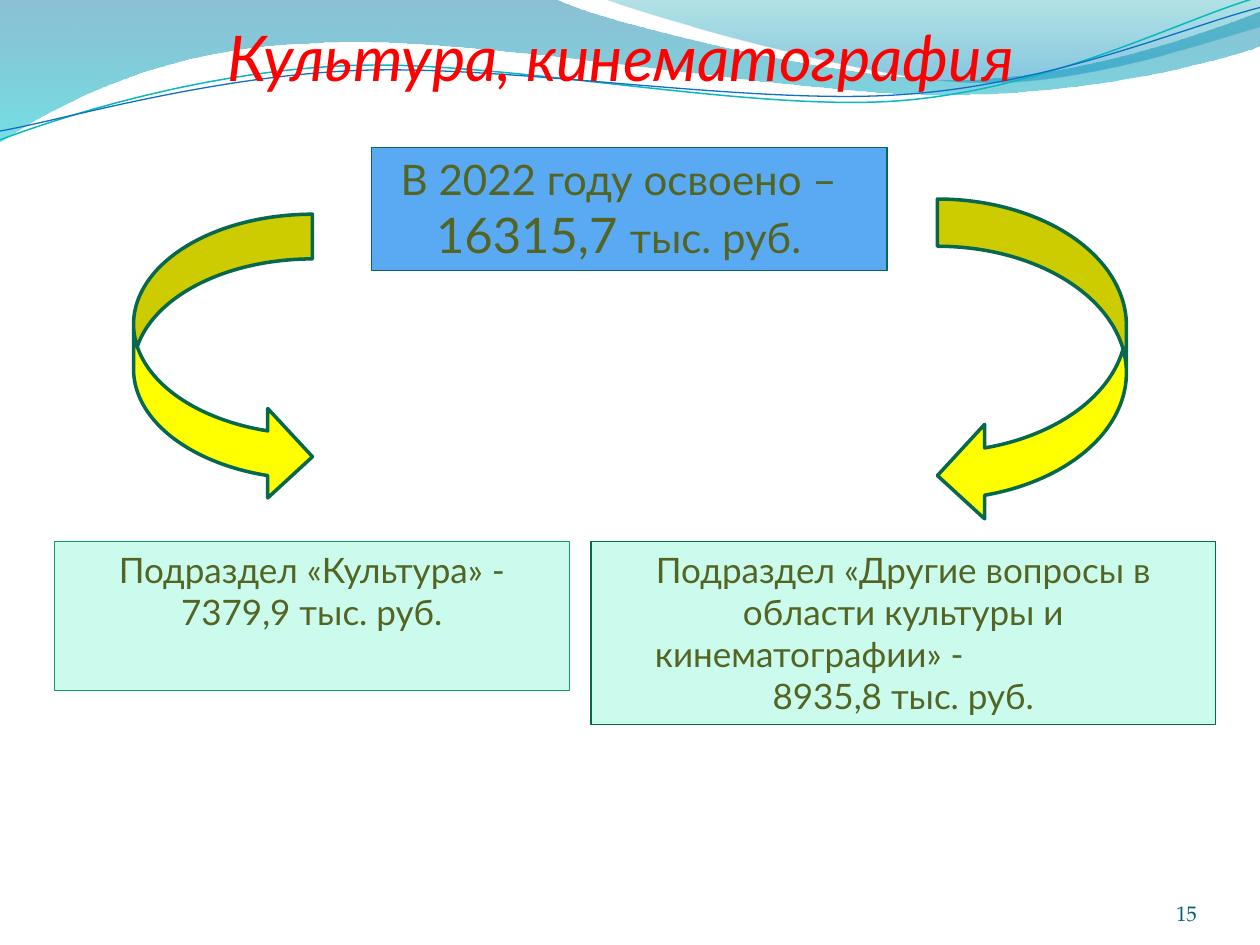
"""Build the slide on culture and cinematography spending."""
from dataclasses import dataclass
from math import cos, radians, sin

from lxml.etree import SubElement
from pptx import Presentation
from pptx.dml.color import RGBColor
from pptx.enum.shapes import MSO_SHAPE
from pptx.enum.text import MSO_ANCHOR, PP_ALIGN
from pptx.oxml.ns import qn
from pptx.util import Inches, Pt

RED = RGBColor(0xFF, 0x00, 0x00)
OLIVE = RGBColor(0x54, 0x64, 0x22)
TEAL = RGBColor(0x04, 0x5D, 0x75)
MINT = RGBColor(0xCA, 0xFB, 0xED)
SKY = RGBColor(0x59, 0xAA, 0xF2)
YELLOW = RGBColor(0xFF, 0xFF, 0x00)
GREEN = RGBColor(0x0C, 0x9B, 0x74)
DARK_GREEN = RGBColor(0x08, 0x68, 0x4E)
WAVE_BLUE = RGBColor(0x00, 0x74, 0xA1)
WAVE_CYAN = RGBColor(0x00, 0xC6, 0xCF)
WAVE_TEAL = RGBColor(0x00, 0xA1, 0xA9)
WAVE_AZURE = RGBColor(0x00, 0x8B, 0xBF)
LINE_CYAN = RGBColor(0x0A, 0xB8, 0xBF)
LINE_BLUE = RGBColor(0x0F, 0x6F, 0xC6)
BODY_FONT = "Lato"
NUMBER_FONT = "TeX Gyre Pagella"
LINE_TILT = -2.7


@dataclass
class Stop:
    position: float
    color: RGBColor
    opacity: int


@dataclass
class Wave:
    segments: list
    stops: tuple = ()
    line: RGBColor | None = None
    width: float = 0
    center: tuple = (0, 0)
    tilt: float = 0


@dataclass
class Run:
    text: str
    size: float
    font: str = BODY_FONT
    color: RGBColor = OLIVE
    italic: bool = False


@dataclass
class Line:
    runs: list
    align: PP_ALIGN = PP_ALIGN.CENTER
    left_indent: float = 0
    right_indent: float = 0


@dataclass
class Block:
    kind: MSO_SHAPE
    box: tuple
    fill: RGBColor
    line: RGBColor
    width: float
    lines: tuple = ()


WAVES = [
    Wave([(0, 0), (4.4, -0.01), (4.76, 0.17, 6.64, 0.63, 7.58, 0.63),
          (8.53, 0.63, 9.58, 0.26, 10, 0.09), (10.01, 0.36),
          (9.83, 0.44, 8.7, 0.76, 7.46, 0.75), (6.22, 0.75, 3.82, 0.28, 2.57, 0.34),
          (1.29, 0.36, 0.46, 0.83, -0.01, 1.13)],
         stops=(Stop(0, WAVE_BLUE, 45), Stop(1, WAVE_CYAN, 55))),
    Wave([(4.79, -0.01), (5.09, 0.11, 6.82, 0.62, 7.69, 0.65),
          (8.56, 0.69, 9.61, 0.32, 10, 0.21), (10, 0)],
         stops=(Stop(0, WAVE_TEAL, 30), Stop(0.8, WAVE_AZURE, 45))),
    Wave([(0, 1.11), (0.48, 0.93, 1.58, 0.57, 2.77, 0.52),
          (3.95, 0.47, 5.93, 0.89, 7.13, 0.8), (8.33, 0.71, 9.38, 0.15, 9.98, -0.02)],
         line=LINE_CYAN, width=0.85, center=(4.99, 0.58), tilt=LINE_TILT),
    Wave([(0, 1.04), (0.47, 0.96, 1.64, 0.61, 2.83, 0.56),
          (4.03, 0.51, 5.97, 0.84, 7.17, 0.75), (8.36, 0.67, 9.41, 0.21, 10, 0.06)],
         line=LINE_BLUE, width=0.75, center=(5, 0.59), tilt=LINE_TILT),
]

BLOCKS = [
    Block(MSO_SHAPE.RECTANGLE, (0.43, 4.3, 4.09, 1.18), MINT, GREEN, 0.75,
          (Line([Run("Подраздел «Культура» - 7379,9 тыс. руб.", 20)]),)),
    Block(MSO_SHAPE.RECTANGLE, (4.69, 4.3, 4.96, 1.45), MINT, DARK_GREEN, 0.75,
          (Line([Run("Подраздел «Другие вопросы в области культуры и", 20)]),
           Line([Run("кинематографии» -", 20)], PP_ALIGN.LEFT, left_indent=0.41),
           Line([Run("8935,8 тыс. руб.", 20)]))),
    Block(MSO_SHAPE.RECTANGLE, (2.95, 1.17, 4.09, 0.98), SKY, DARK_GREEN, 0.75,
          (Line([Run("В 2022 году освоено –", 24)], right_indent=0.17),
           Line([Run("16315,7 ", 28), Run("тыс. руб.", 24)]))),
    Block(MSO_SHAPE.CURVED_RIGHT_ARROW, (1.06, 1.7, 1.42, 2.28), YELLOW, DARK_GREEN, 2),
    Block(MSO_SHAPE.CURVED_LEFT_ARROW, (7.44, 1.58, 1.5, 2.57), YELLOW, DARK_GREEN, 2),
]


def level(wave: Wave, x: float, y: float) -> tuple:
    """Undo the tilt of a point and return it as lengths."""
    angle = radians(-wave.tilt)
    center_x, center_y = wave.center
    across, down = x - center_x, y - center_y
    return (Inches(center_x + across * cos(angle) - down * sin(angle)),
            Inches(center_y + across * sin(angle) + down * cos(angle)))


def bend(shape, segments: list) -> None:
    """Join each three outline points of a cubic segment into one curve."""
    corners = list(shape.element.iter(qn("a:lnTo")))
    for segment in segments[1:]:
        count = len(segment) // 2
        group, corners = corners[:count], corners[count:]
        if count == 3:
            first, *others = group
            first.tag = qn("a:cubicBezTo")
            for other in others:
                first.append(other[0])
                other.getparent().remove(other)


def draw_wave(slide, wave: Wave) -> None:
    """Draw one ribbon or line of the header."""
    first, *rest = [level(wave, *segment[index:index + 2])
                    for segment in wave.segments for index in range(0, len(segment), 2)]
    builder = slide.shapes.build_freeform(*first)
    builder.add_line_segments(rest, close=bool(wave.stops))
    shape = builder.convert_to_shape()
    bend(shape, wave.segments)
    shape.rotation = wave.tilt
    shape.shadow.inherit = False
    if not wave.stops:
        shape.fill.background()
        shape.line.color.rgb = wave.line
        shape.line.width = Pt(wave.width)
        return
    shape.line.fill.background()
    shape.fill.gradient()
    shape.fill.gradient_angle = 270
    for gradient_stop, stop in zip(shape.fill.gradient_stops, wave.stops):
        gradient_stop.position = stop.position
        gradient_stop.color.rgb = stop.color
    for color, stop in zip(shape.element.spPr.iter(qn("a:srgbClr")), wave.stops):
        SubElement(color, qn("a:alpha")).set("val", str(stop.opacity * 1000))


def write(frame, lines: tuple, anchor: MSO_ANCHOR = MSO_ANCHOR.TOP) -> None:
    """Fill a text frame with formatted lines."""
    frame.word_wrap = True
    frame.vertical_anchor = anchor
    for index, line in enumerate(lines):
        paragraph = frame.add_paragraph() if index else frame.paragraphs[0]
        paragraph.alignment = line.align
        for name, indent in (("marL", line.left_indent), ("marR", line.right_indent)):
            if indent:
                paragraph._p.get_or_add_pPr().set(name, str(Inches(indent)))
        for item in line.runs:
            run = paragraph.add_run()
            run.text = item.text
            run.font.name = item.font
            run.font.size = Pt(item.size)
            run.font.italic = item.italic
            run.font.color.rgb = item.color


def draw_block(slide, block: Block) -> None:
    """Draw one box or curved arrow."""
    shape = slide.shapes.add_shape(block.kind, *map(Inches, block.box))
    shape.shadow.inherit = False
    shape.fill.solid()
    shape.fill.fore_color.rgb = block.fill
    shape.line.color.rgb = block.line
    shape.line.width = Pt(block.width)
    write(shape.text_frame, block.lines)


def main() -> None:
    """Assemble and save the presentation."""
    presentation = Presentation()
    presentation.slide_width, presentation.slide_height = Inches(10), Inches(7.5)
    slide = presentation.slides.add_slide(presentation.slide_layouts[5])
    for wave in WAVES:
        draw_wave(slide, wave)
    number = slide.shapes.add_textbox(*map(Inches, (8.67, 6.95, 0.83, 0.4)))
    frame = number.text_frame
    frame.margin_left = frame.margin_right = frame.margin_top = frame.margin_bottom = 0
    write(frame, (Line([Run("15", 12, NUMBER_FONT, TEAL)], PP_ALIGN.RIGHT),), MSO_ANCHOR.BOTTOM)
    title = slide.shapes.title
    title.left, title.top, title.width, title.height = map(Inches, (0.28, 0.1, 9.29, 0.71))
    write(title.text_frame, (Line([Run("Культура, кинематография", 36, color=RED, italic=True)]),))
    title.element.getparent().append(title.element)
    for block in BLOCKS:
        draw_block(slide, block)
    presentation.save("out.pptx")


if __name__ == "__main__":
    main()
